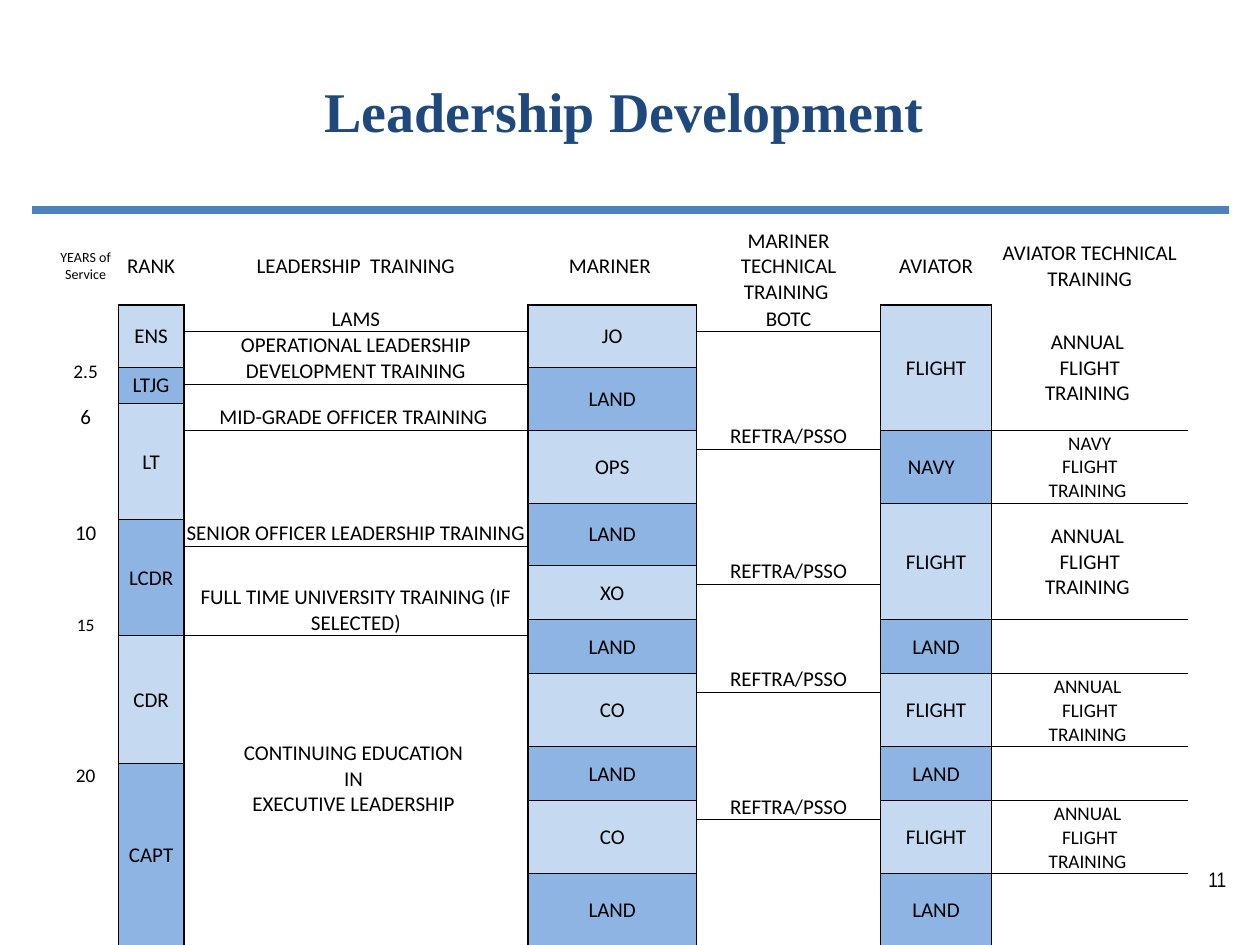
from dataclasses import dataclass

from lxml import etree
from pptx import Presentation
from pptx.dml.color import RGBColor
from pptx.enum.shapes import MSO_CONNECTOR
from pptx.enum.text import MSO_ANCHOR, PP_ALIGN
from pptx.oxml.ns import qn
from pptx.util import Inches, Pt

STRAIGHT = MSO_CONNECTOR.STRAIGHT
TOP, MIDDLE, BOTTOM = MSO_ANCHOR.TOP, MSO_ANCHOR.MIDDLE, MSO_ANCHOR.BOTTOM
CENTER, RIGHT = PP_ALIGN.CENTER, PP_ALIGN.RIGHT

BLACK = RGBColor(0x00, 0x00, 0x00)
NAVY_BLUE = RGBColor(0x1F, 0x49, 0x7D)
RULE_BLUE = RGBColor(0x4F, 0x81, 0xBD)
LIGHT_BLUE = RGBColor(0xC5, 0xD9, 0xF1)
MID_BLUE = RGBColor(0x8D, 0xB4, 0xE3)

PLAIN_TABLE_STYLE = "{2D5ABB26-0587-4C30-8999-92F81FD0307C}"
THICK, THIN = 1, 0.5

COLUMN_WIDTHS = [0.52, 0.52, 2.73, 1.34, 1.46, 0.88, 1.56]
ROW_HEIGHTS = [0.61, 0.21, 0.15, 0.13, 0.13, 0.15, 0.21, 0.15, 0.15, 0.28,
               0.13, 0.21, 0.15, 0.15, 0.28, 0.13, 0.15, 0.15, 0.15, 0.43,
               0.13, 0.3, 0.15, 0.42, 0.58]
LAST_ROW = len(ROW_HEIGHTS) - 1
YEARS, RANK, LEADERSHIP, MARINER, MARINER_TECH, AVIATOR, AVIATOR_TECH = range(7)
CAREER_COLUMNS = (RANK, MARINER, AVIATOR)

HEADINGS = ["YEARS of Service", "RANK", "LEADERSHIP  TRAINING", "MARINER ",
            "MARINER TECHNICAL TRAINING ", "AVIATOR",
            "AVIATOR TECHNICAL TRAINING"]


@dataclass
class Stage:
    rows: int
    text: str = ""
    size: float = 12
    anchor: MSO_ANCHOR = MIDDLE
    bottom_margin: float = 0


ANNUAL = "ANNUAL \nFLIGHT\nTRAINING "
NAVY = "NAVY\nFLIGHT\nTRAINING "
REFRESHER = "REFTRA/PSSO"

STAGES = {
    YEARS: [
        Stage(1), Stage(1), Stage(2, "2.5", 11, BOTTOM), Stage(1),
        Stage(1, "6"), Stage(1), Stage(1), Stage(2), Stage(1, "10"),
        Stage(4, "15", 10, BOTTOM), Stage(1), Stage(4),
        Stage(4, "20", 11, TOP),
    ],
    RANK: [
        Stage(3, "ENS"), Stage(2, "LTJG"), Stage(5, "LT"),
        Stage(5, "LCDR"), Stage(5, "CDR"), Stage(4, "CAPT"),
    ],
    LEADERSHIP: [
        Stage(1, "LAMS"),
        Stage(3, "OPERATIONAL LEADERSHIP DEVELOPMENT TRAINING", anchor=BOTTOM),
        Stage(2, "MID-GRADE OFFICER TRAINING ", anchor=BOTTOM),
        Stage(5, "SENIOR OFFICER LEADERSHIP TRAINING", anchor=BOTTOM),
        Stage(4, "FULL TIME UNIVERSITY TRAINING (IF SELECTED)", anchor=BOTTOM),
        Stage(9, "CONTINUING EDUCATION \nIN \nEXECUTIVE LEADERSHIP ",
              bottom_margin=0.2),
    ],
    MARINER: [
        Stage(3, "JO"), Stage(3, "LAND"), Stage(3, "OPS"), Stage(3, "LAND"),
        Stage(2, "XO"), Stage(3, "LAND"), Stage(2, "CO"), Stage(2, "LAND"),
        Stage(2, "CO"), Stage(1, "LAND"),
    ],
    MARINER_TECH: [
        Stage(1, "BOTC"),
        *(Stage(rows, REFRESHER, anchor=BOTTOM) for rows in (6, 6, 5, 4)),
        Stage(2),
    ],
    AVIATOR: [
        Stage(6, "FLIGHT"), Stage(3, "NAVY  "), Stage(5, "FLIGHT"),
        Stage(3, "LAND"), Stage(2, "FLIGHT"), Stage(2, "LAND"),
        Stage(2, "FLIGHT"), Stage(1, "LAND"),
    ],
    AVIATOR_TECH: [
        Stage(6, ANNUAL), Stage(3, NAVY, 11), Stage(5, ANNUAL), Stage(3),
        Stage(2, ANNUAL, 11), Stage(2), Stage(2, ANNUAL, 11), Stage(1),
    ],
}


def style_run(run, size, font, color=BLACK, bold=False):
    run.font.size = Pt(size)
    run.font.name = font
    run.font.color.rgb = color
    run.font.bold = bold


def set_borders(cell, borders):
    properties = cell._tc.get_or_add_tcPr()
    for side in "LRTB":
        if side in borders:
            line = etree.SubElement(properties, qn(f"a:ln{side}"),
                                    w=str(int(Pt(borders[side]))))
            fill = etree.SubElement(line, qn("a:solidFill"))
            etree.SubElement(fill, qn("a:srgbClr"), val=str(BLACK))


def shrink_empty(cell):
    etree.SubElement(cell.text_frame.paragraphs[0]._p,
                     qn("a:endParaRPr"), sz="400")


def write_cell(cell, stage):
    cell.margin_left = cell.margin_top = cell.margin_right = Inches(0.01)
    cell.margin_bottom = Inches(stage.bottom_margin)
    cell.vertical_anchor = stage.anchor
    if not stage.text:
        shrink_empty(cell)
        return
    paragraph = cell.text_frame.paragraphs[0]
    paragraph.alignment = CENTER
    for index, line in enumerate(stage.text.split("\n")):
        if index:
            paragraph.add_line_break()
        run = paragraph.add_run()
        run.text = line
        style_run(run, stage.size, "Calibri")


def stage_borders(column, first, last):
    if column == YEARS:
        return {"R": THICK}
    career = column in CAREER_COLUMNS
    borders = {"L": THICK}
    if column != AVIATOR_TECH:
        borders["R"] = THICK
    if first > 1 or career:
        borders["T"] = THICK if first == 1 else THIN
    if last < LAST_ROW or career or column == LEADERSHIP:
        borders["B"] = THICK if last == LAST_ROW and career else THIN
    return borders


def fill_column(table, column, stages):
    first = 1
    for index, stage in enumerate(stages):
        last = first + stage.rows - 1
        start = table.cell(first, column)
        if stage.rows > 1:
            start.merge(table.cell(last, column))
        write_cell(start, stage)
        borders = stage_borders(column, first, last)
        for row in range(first, last + 1):
            cell = table.cell(row, column)
            set_borders(cell, borders)
            if row > first:
                shrink_empty(cell)
        if column in CAREER_COLUMNS:
            start.fill.solid()
            start.fill.fore_color.rgb = MID_BLUE if index % 2 else LIGHT_BLUE
        first = last + 1


def add_career_table(slide):
    frame = slide.shapes.add_table(
        len(ROW_HEIGHTS), len(COLUMN_WIDTHS), Inches(0.42), Inches(1.8),
        Inches(sum(COLUMN_WIDTHS)), Inches(sum(ROW_HEIGHTS)))
    table = frame.table
    table.first_row = table.horz_banding = False
    table._tbl.tblPr.find(qn("a:tableStyleId")).text = PLAIN_TABLE_STYLE
    for column, width in zip(table.columns, COLUMN_WIDTHS):
        column.width = Inches(width)
    for row, height in zip(table.rows, ROW_HEIGHTS):
        row.height = Inches(height)
    for column, heading in enumerate(HEADINGS):
        cell = table.cell(0, column)
        write_cell(cell, Stage(1, heading, 8 if column == YEARS else 12))
        if column in CAREER_COLUMNS:
            set_borders(cell, {"B": THICK})
    for column, stages in STAGES.items():
        fill_column(table, column, stages)


def add_rule(slide):
    rule = slide.shapes.add_connector(
        STRAIGHT, Inches(0.25), Inches(1.67), Inches(9.75), Inches(1.67))
    rule.line.color.rgb = RULE_BLUE
    rule.line.width = Pt(4.5)
    etree.SubElement(rule._element.spPr, qn("a:effectLst"))


def write_title(slide):
    title = slide.shapes.title
    title.left, title.top = Inches(1.58), Inches(0.25)
    title.width, title.height = Inches(6.75), Inches(1.25)
    title.text_frame.vertical_anchor = MIDDLE
    paragraph = title.text_frame.paragraphs[0]
    paragraph.alignment = CENTER
    run = paragraph.add_run()
    run.text = "Leadership Development"
    style_run(run, 32, "Times New Roman", NAVY_BLUE, True)


def add_page_number(slide):
    box = slide.shapes.add_textbox(
        Inches(7.75), Inches(6.83), Inches(2.08), Inches(0.5))
    box.text_frame.word_wrap = True
    paragraph = box.text_frame.paragraphs[0]
    paragraph.alignment = RIGHT
    run = paragraph.add_run()
    run.text = "11"
    style_run(run, 12, "Arial Narrow")


def main():
    deck = Presentation()
    deck.slide_width, deck.slide_height = Inches(10), Inches(7.5)
    slide = deck.slides.add_slide(deck.slide_layouts[5])
    add_rule(slide)
    write_title(slide)
    add_career_table(slide)
    add_page_number(slide)
    deck.save("out.pptx")


if __name__ == "__main__":
    main()
